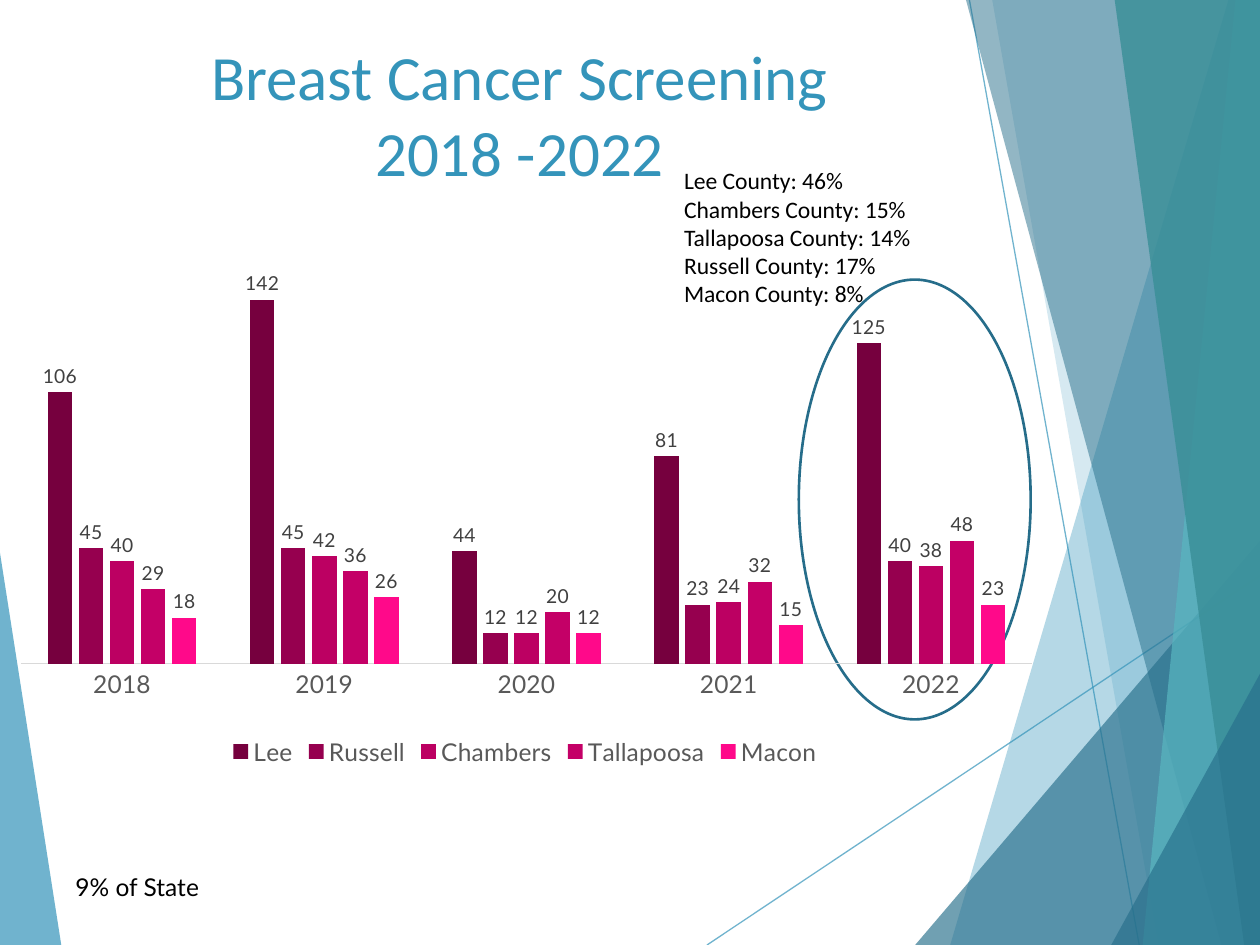
from lxml.etree import SubElement
from pptx import Presentation
from pptx.chart.data import CategoryChartData
from pptx.dml.color import RGBColor
from pptx.enum.chart import XL_CHART_TYPE, XL_LABEL_POSITION, XL_LEGEND_POSITION, XL_TICK_MARK
from pptx.enum.shapes import MSO_CONNECTOR, MSO_SHAPE
from pptx.enum.text import MSO_ANCHOR, MSO_AUTO_SIZE, PP_ALIGN
from pptx.oxml import parse_xml
from pptx.oxml.ns import nsdecls, qn
from pptx.util import Pt

THEME = {
    "blue": "3494BA", "deep": "276F8B", "aqua": "58B6C0", "teal": "3A8F98",
    "ring": "266D8A", "black": "000000", "gray": "595959", "dark": "404040",
    "rule": "D9D9D9", "head": "Calibri", "body": "Lato",
    "title": 36, "list": 13.5, "note": 14, "axis": 14, "label": 11,
}

TITLE = "Breast Cancer Screening\v2018 -2022"
SHARES = [("Lee", 46), ("Chambers", 15), ("Tallapoosa", 14), ("Russell", 17), ("Macon", 8)]
NOTE = "9% of State"
YEARS = ["2018", "2019", "2020", "2021", "2022"]
COUNTS = [
    ("Lee", "76003E", (106, 142, 44, 81, 125)),
    ("Russell", "96004F", (45, 45, 12, 23, 40)),
    ("Chambers", "BC0062", (40, 42, 12, 24, 38)),
    ("Tallapoosa", "C40067", (29, 36, 20, 32, 48)),
    ("Macon", "FF098A", (18, 26, 12, 15, 23)),
]
PLOT = {"x": 0.02, "y": 0.029, "w": 0.963, "h": 0.769}

WIDE, HIGH = 720, 540
LEFT = ("blue", 70, [(0, 316), (35, HIGH), (0, HIGH)])
RAYS = [((404, HIGH), (WIDE, 329)), ((554, 0), (651, HIGH))]
SHARDS = [
    ("blue", 36, [(702, 0), (543, HIGH), (WIDE, HIGH), (WIDE, 0)]),
    ("blue", 20, [(567, 0), (662, HIGH), (WIDE, HIGH), (WIDE, 0)]),
    ("deep", 66, [(523, HIGH), (WIDE, 309), (WIDE, HIGH)]),
    ("deep", 50, [(552, 0), (698, HIGH), (WIDE, HIGH), (WIDE, 0)]),
    ("aqua", 70, [(706, 0), (653, HIGH), (WIDE, HIGH), (WIDE, 0)]),
    ("teal", 82, [(637, 0), (711, HIGH), (WIDE, HIGH), (WIDE, 0)]),
    ("deep", 66, [(635, HIGH), (WIDE, 385), (WIDE, HIGH)]),
]


def tint(name):
    return RGBColor.from_string(THEME.get(name, name))


def fade(fill, name, part):
    fill.solid()
    fill.fore_color.rgb = tint(name)
    for clr in fill._xPr.iter(qn("a:srgbClr")):
        SubElement(clr, qn("a:alpha"), val=str(part * 1000))


def style(font, face, size, name):
    font.name = THEME[face]
    font.size = Pt(THEME[size])
    font.color.rgb = tint(name)


def shard(slide, name, part, dots):
    path = slide.shapes.build_freeform(*dots[0], scale=Pt(1))
    path.add_line_segments(dots[1:], close=True)
    shape = path.convert_to_shape()
    shape.shadow.inherit = False
    shape.line.fill.background()
    fade(shape.fill, name, part)


def ray(slide, start, end):
    line = slide.shapes.add_connector(
        MSO_CONNECTOR.STRAIGHT, *(Pt(n) for n in start + end))
    line.line.width = Pt(0.75)
    fade(line.line.fill, "blue", 70)
    SubElement(line._element.spPr, qn("a:effectLst"))


def text(slide, box, words, face, size, name, align=PP_ALIGN.LEFT):
    frame = slide.shapes.add_textbox(*map(Pt, box)).text_frame
    frame.word_wrap = True
    frame.auto_size = MSO_AUTO_SIZE.NONE
    frame.vertical_anchor = MSO_ANCHOR.TOP
    frame.text = words
    for para in frame.paragraphs:
        para.alignment = align
        for run in para.runs:
            style(run.font, face, size, name)


def place(chart):
    area = chart._chartSpace.chart.plotArea
    for old in area.findall(qn("c:layout")):
        area.remove(old)
    layout = parse_xml(f"<c:layout {nsdecls('c')}/>")
    inner = SubElement(layout, qn("c:manualLayout"))
    SubElement(inner, qn("c:layoutTarget"), val="inner")
    for key in "xy":
        SubElement(inner, qn(f"c:{key}Mode"), val="edge")
    for key, part in PLOT.items():
        SubElement(inner, qn(f"c:{key}"), val=str(part))
    area.insert(0, layout)
    chart._chartSpace.chart.addnext(
        parse_xml(f"<c:spPr {nsdecls('c', 'a')}><a:noFill/><a:ln><a:noFill/></a:ln></c:spPr>"))


def graph(slide, box):
    data = CategoryChartData()
    data.categories = YEARS
    for name, _, vals in COUNTS:
        data.add_series(name, vals)
    chart = slide.shapes.add_chart(
        XL_CHART_TYPE.COLUMN_CLUSTERED, *map(Pt, box), data).chart
    place(chart)
    chart.has_title = False
    style(chart.font, "body", "label", "black")

    chart.has_legend = True
    chart.legend.position = XL_LEGEND_POSITION.BOTTOM
    chart.legend.include_in_layout = False
    style(chart.legend.font, "body", "axis", "gray")

    base, scale = chart.category_axis, chart.value_axis
    base.major_tick_mark = base.minor_tick_mark = XL_TICK_MARK.NONE
    base.format.line.color.rgb = tint("rule")
    base.format.line.width = Pt(0.75)
    style(base.tick_labels.font, "body", "axis", "gray")
    scale.minimum_scale, scale.maximum_scale = 0, 160
    scale.has_major_gridlines = False
    scale.visible = False

    plot = chart.plots[0]
    plot.gap_width, plot.overlap = 219, -27
    plot.vary_by_categories = False
    for bars, (_, color, _) in zip(plot.series, COUNTS):
        bars.format.fill.solid()
        bars.format.fill.fore_color.rgb = tint(color)
        bars.invert_if_negative = False
        labels = bars.data_labels
        labels.show_value = True
        labels.position = XL_LABEL_POSITION.OUTSIDE_END
        style(labels.font, "body", "label", "dark")


def main():
    deck = Presentation()
    deck.slide_width, deck.slide_height = Pt(WIDE), Pt(HIGH)
    slide = deck.slides.add_slide(deck.slide_layouts[6])

    shard(slide, *LEFT)
    for ends in RAYS:
        ray(slide, *ends)
    for item in SHARDS:
        shard(slide, *item)

    text(slide, (12, 18, 570, 108), TITLE, "head", "title", "blue", PP_ALIGN.CENTER)

    ring = slide.shapes.add_shape(MSO_SHAPE.OVAL, *map(Pt, (456.5, 159.8, 132.5, 251.3)))
    ring.shadow.inherit = False
    ring.fill.background()
    ring.line.color.rgb = tint("ring")
    ring.line.width = Pt(1.5)

    graph(slide, (0, 136, 600, 305))
    text(slide, (36, 494.6, 120, 24.5), NOTE, "body", "note", "black")
    lines = "\n".join(f"{name} County: {share}%" for name, share in SHARES)
    text(slide, (383.8, 91.4, 166.3, 89.3), lines, "head", "list", "black")

    deck.save("out.pptx")


if __name__ == "__main__":
    main()
